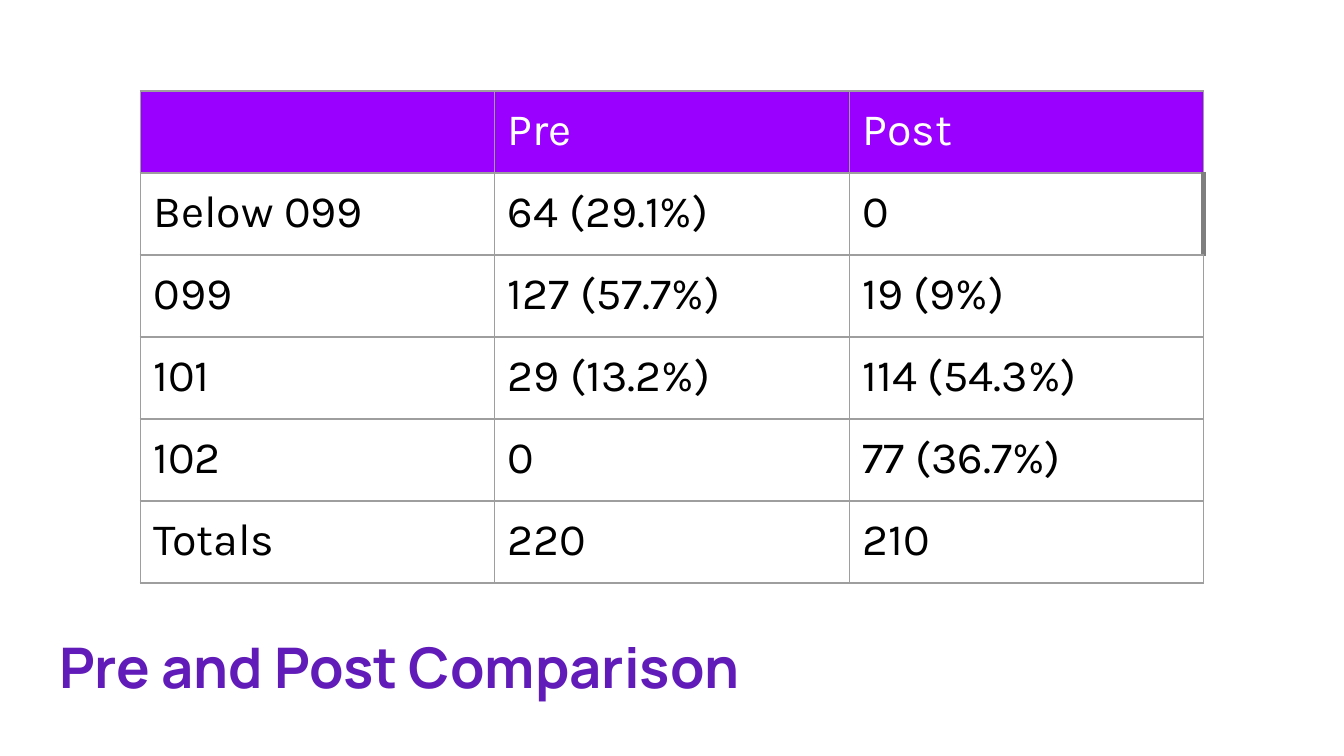
from dataclasses import dataclass

from lxml import etree
from pptx import Presentation
from pptx.dml.color import RGBColor
from pptx.enum import text
from pptx.oxml import ns
from pptx.util import Cm, Pt


@dataclass(frozen=True)
class Theme:
    title_color: str = "611BB8"
    header_fill: str = "9900FF"
    header_text: str = "FFFFFF"
    body_text: str = "000000"
    border: str = "9E9E9E"
    accent_border: str = "7F7F7F"
    title_font: str = "Manrope"
    table_font: str = "Karla"
    title_size: int = 30
    table_size: int = 24
    border_width: float = 0.75
    accent_width: float = 3
    inset: float = 0.25


THEME = Theme()

ROWS = [
    ("", "Pre", "Post"),
    ("Below 099", "64 (29.1%)", "0"),
    ("099", "127 (57.7%)", "19 (9%)"),
    ("101", "29 (13.2%)", "114 (54.3%)"),
    ("102", "0", "77 (36.7%)"),
    ("Totals", "220", "210"),
]


def add_run(paragraph, words, font_name, size, color, bold=False):
    run = paragraph.add_run()
    run.text = words
    run.font.name = font_name
    run.font.size = Pt(size)
    run.font.bold = bold
    run.font.color.rgb = RGBColor.from_string(color)


def set_insets(holder):
    """Give a text frame or a table cell the same margin on each side."""
    for side in ("left", "right", "top", "bottom"):
        setattr(holder, f"margin_{side}", Cm(THEME.inset))


def set_borders(cell, right_accent=False):
    """Draw the four cell borders, which the schema wants ahead of the fill."""
    properties = cell._tc.get_or_add_tcPr()
    for index, side in enumerate("LRTB"):
        accented = right_accent and side == "R"
        color = THEME.accent_border if accented else THEME.border
        width = THEME.accent_width if accented else THEME.border_width
        line = etree.Element(ns.qn(f"a:ln{side}"), w=str(Pt(width)))
        fill = etree.SubElement(line, ns.qn("a:solidFill"))
        etree.SubElement(fill, ns.qn("a:srgbClr"), val=color)
        properties.insert(index, line)


def add_comparison_table(slide, left, top, width, height):
    frame = slide.shapes.add_table(len(ROWS), len(ROWS[0]), left, top, width, height)
    table = frame.table
    table.first_row = False
    table.horz_banding = False

    for row_index, values in enumerate(ROWS):
        is_header = row_index == 0
        for column_index, value in enumerate(values):
            cell = table.cell(row_index, column_index)
            set_insets(cell)
            if is_header:
                cell.fill.solid()
                cell.fill.fore_color.rgb = RGBColor.from_string(THEME.header_fill)
            else:
                cell.fill.background()
            is_last_column = column_index == len(values) - 1
            set_borders(cell, right_accent=row_index == 1 and is_last_column)
            if value:
                color = THEME.header_text if is_header else THEME.body_text
                add_run(cell.text_frame.paragraphs[0], value,
                        THEME.table_font, THEME.table_size, color)


def add_title(slide, left, top, width, height):
    frame = slide.shapes.add_textbox(left, top, width, height).text_frame
    frame.word_wrap = True
    frame.vertical_anchor = text.MSO_ANCHOR.MIDDLE
    set_insets(frame)
    add_run(frame.paragraphs[0], "Pre and Post Comparison",
            THEME.title_font, THEME.title_size, THEME.title_color, bold=True)


def main():
    presentation = Presentation()
    presentation.slide_width = Cm(25.4)
    presentation.slide_height = Cm(14.29)
    slide = presentation.slides.add_slide(presentation.slide_layouts[6])
    add_title(slide, Cm(0.87), Cm(11.76), Cm(16.66), Cm(1.68))
    add_comparison_table(slide, Cm(2.65), Cm(1.72), Cm(20.1), Cm(9.3))
    presentation.save("out.pptx")


if __name__ == "__main__":
    main()
